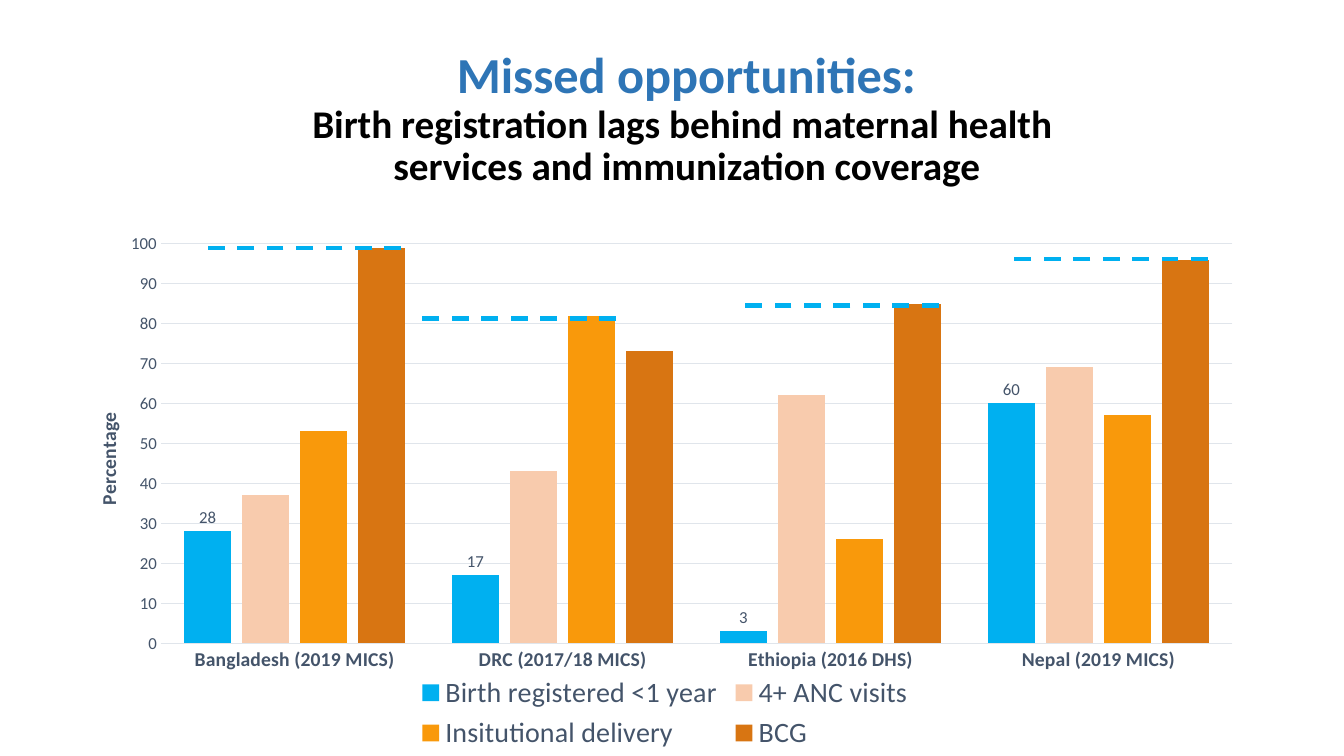
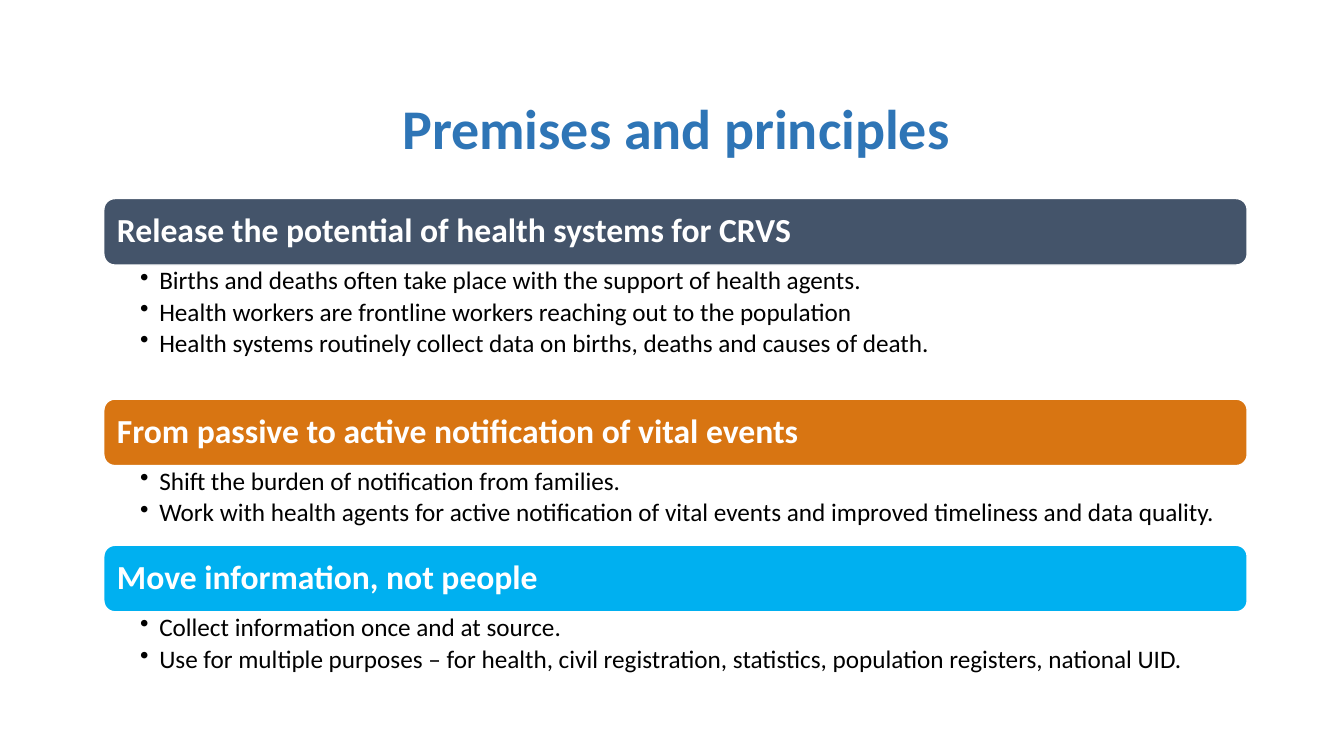
from copy import deepcopy
from dataclasses import dataclass

from lxml.etree import SubElement
from pptx import Presentation
from pptx.chart.data import CategoryChartData
from pptx.dml.color import RGBColor
from pptx.enum.chart import XL_CHART_TYPE, XL_LABEL_POSITION, XL_LEGEND_POSITION, XL_TICK_MARK
from pptx.enum.dml import MSO_LINE
from pptx.enum.shapes import MSO_CONNECTOR, MSO_SHAPE
from pptx.enum.text import MSO_ANCHOR, MSO_AUTO_SIZE, PP_ALIGN
from pptx.oxml import parse_xml
from pptx.oxml.ns import nsdecls, qn
from pptx.util import Inches, Pt


@dataclass(frozen=True)
class Theme:
    font: str = "Calibri"
    blue: RGBColor = RGBColor(0x2E, 0x75, 0xB6)
    sky: RGBColor = RGBColor(0x00, 0xB0, 0xF0)
    slate: RGBColor = RGBColor(0x44, 0x54, 0x6A)
    peach: RGBColor = RGBColor(0xF8, 0xCB, 0xAD)
    amber: RGBColor = RGBColor(0xF9, 0x99, 0x0B)
    rust: RGBColor = RGBColor(0xD8, 0x75, 0x12)
    grid: RGBColor = RGBColor(0xE0, 0xE5, 0xEB)
    black: RGBColor = RGBColor(0, 0, 0)
    white: RGBColor = RGBColor(0xFF, 0xFF, 0xFF)
    title: int = 40
    lead: int = 36
    subtitle: int = 28
    heading: int = 24
    legend: int = 20
    body: int = 18
    axis: int = 14
    tick: int = 12


THEME = Theme()
LINE_SPACING = 0.9
BAND_LEFT, BAND_WIDTH, BAND_HEIGHT = 1.03, 11.34, 0.66
BULLET_INDENT = 0.19
MARK_LENGTH = 2.04

COUNTRIES = ["Bangladesh (2019 MICS)", "DRC (2017/18 MICS)", "Ethiopia (2016 DHS)", "Nepal (2019 MICS)"]
COVERAGE = [
    ("Birth registered <1 year", [28, 17, 3, 60], THEME.sky),
    ("4+ ANC visits", [37, 43, 62, 69], THEME.peach),
    ("Insitutional delivery", [53, 82, 26, 57], THEME.amber),
    ("BCG", [99, 73, 85, 96], THEME.rust),
]
HIGHEST_MARKS = [(3.98, 2.46), (6.11, 3.16), (9.31, 3.03), (11.98, 2.57)]

PRINCIPLES = [
    ("Release the potential of health systems for CRVS", THEME.slate, 1.33, [
        "Births and deaths often take place with the support of health agents.",
        "Health workers are frontline workers reaching out to the population",
        "Health systems routinely collect data on births, deaths and causes of death.",
    ]),
    ("From passive to active notification of vital events", THEME.rust, 0.79, [
        "Shift the burden of notification from families.",
        "Work with health agents for active notification of vital events and improved timeliness and data quality.",
    ]),
    ("Move information, not people", THEME.sky, 0.79, [
        "Collect information once and at source.",
        "Use for multiple purposes – for health, civil registration, statistics, population registers, national UID.",
    ]),
]


def style_font(font, size, color, bold=False):
    font.name = THEME.font
    font.size = Pt(size)
    font.color.rgb = color
    font.bold = bold


def style_frame(frame, anchor, left, top, right, bottom):
    frame.word_wrap = True
    frame.auto_size = MSO_AUTO_SIZE.NONE
    frame.vertical_anchor = anchor
    frame.margin_left, frame.margin_top = Inches(left), Inches(top)
    frame.margin_right, frame.margin_bottom = Inches(right), Inches(bottom)


def add_titled_slide(deck, lines, top, width, height, left_margin):
    slide = deck.slides.add_slide(deck.slide_layouts[5])
    title = slide.shapes.title
    title.left, title.top = Inches(0), Inches(top)
    title.width, title.height = Inches(width), Inches(height)
    style_frame(title.text_frame, MSO_ANCHOR.MIDDLE, left_margin, 0.05, 0.1, 0.05)
    paragraph = title.text_frame.paragraphs[0]
    paragraph.text = "\v".join(text for text, _, _ in lines)
    paragraph.alignment = PP_ALIGN.CENTER
    paragraph.line_spacing = LINE_SPACING
    for run, (_, size, color) in zip(paragraph.runs, lines):
        style_font(run.font, size, color, bold=True)
    for line_break in paragraph._p.findall(qn("a:br")):
        line_break.append(deepcopy(line_break.getprevious().find(qn("a:rPr"))))
    return slide


def set_layout(parent, index, **fractions):
    current = parent.find(qn("c:layout"))
    if current is not None:
        parent.remove(current)
    target = '<c:layoutTarget val="inner"/>' if "w" in fractions else ""
    modes = "".join(f'<c:{axis}Mode val="edge"/>' for axis in "xy")
    values = "".join(f'<c:{key} val="{value}"/>' for key, value in fractions.items())
    parent.insert(index, parse_xml(
        f'<c:layout {nsdecls("c")}><c:manualLayout>{target}{modes}{values}</c:manualLayout></c:layout>'))


def style_line(line, color, width):
    line.color.rgb = color
    line.width = Pt(width)


def style_axes(chart):
    countries, percentage = chart.category_axis, chart.value_axis
    for axis, size, bold in ((countries, THEME.axis, True), (percentage, THEME.tick, False)):
        axis.major_tick_mark = axis.minor_tick_mark = XL_TICK_MARK.NONE
        style_font(axis.tick_labels.font, size, THEME.slate, bold)
    style_line(countries.format.line, THEME.grid, 0.75)

    percentage.minimum_scale, percentage.maximum_scale, percentage.major_unit = 0, 100, 10
    percentage.tick_labels.number_format = "#,##0"
    percentage.tick_labels.number_format_is_linked = False
    percentage.format.line.fill.background()
    style_line(percentage.major_gridlines.format.line, THEME.grid, 0.75)

    frame = percentage.axis_title.text_frame
    frame.text = "Percentage"
    style_font(frame.paragraphs[0].runs[0].font, THEME.axis, THEME.slate, bold=True)
    rotation = frame._txBody.find(qn("a:bodyPr"))
    rotation.set("rot", "-5400000")
    rotation.set("vert", "horz")
    set_layout(percentage.axis_title._element, 1, x=0.02, y=0.35)


def add_coverage_chart(slide):
    data = CategoryChartData(number_format="0")
    data.categories = COUNTRIES
    for name, values, _ in COVERAGE:
        data.add_series(name, values)
    chart = slide.shapes.add_chart(XL_CHART_TYPE.COLUMN_CLUSTERED, Inches(0.67), Inches(2.2),
                                   Inches(11.85), Inches(5.3), data).chart
    chart.has_title = False
    style_font(chart.font, 10, THEME.black)
    style_axes(chart)

    plot = chart.plots[0]
    plot.gap_width, plot.overlap, plot.vary_by_categories = 100, -24, False
    for series, (_, _, color) in zip(plot.series, COVERAGE):
        series.format.fill.solid()
        series.format.fill.fore_color.rgb = color
    labels = plot.series[0].data_labels
    labels.show_value = True
    labels.number_format, labels.number_format_is_linked = "0", False
    labels.position = XL_LABEL_POSITION.OUTSIDE_END
    style_font(labels.font, THEME.tick, THEME.slate)

    chart.has_legend = True
    chart.legend.position = XL_LEGEND_POSITION.BOTTOM
    chart.legend.include_in_layout = False
    style_font(chart.legend.font, THEME.legend, THEME.slate)
    set_layout(chart._chartSpace.chart.plotArea, 0, x=0.078, y=0.041, w=0.897, h=0.748)


def add_highest_mark(slide, right, y):
    mark = slide.shapes.add_connector(MSO_CONNECTOR.STRAIGHT, Inches(right), Inches(y),
                                      Inches(right - MARK_LENGTH), Inches(y))
    style_line(mark.line, THEME.sky, 3)
    mark.line.dash_style = MSO_LINE.DASH
    SubElement(mark._element.spPr, qn("a:effectLst"))


def add_band(slide, top, heading, color):
    band = slide.shapes.add_shape(MSO_SHAPE.ROUNDED_RECTANGLE, Inches(BAND_LEFT), Inches(top),
                                  Inches(BAND_WIDTH), Inches(BAND_HEIGHT))
    band.shadow.inherit = False
    band.fill.solid()
    band.fill.fore_color.rgb = color
    style_line(band.line, THEME.white, 1)
    style_frame(band.text_frame, MSO_ANCHOR.MIDDLE, 0.1, 0.1, 0.1, 0.1)
    band.text_frame.text = heading
    paragraph = band.text_frame.paragraphs[0]
    paragraph.alignment = PP_ALIGN.LEFT
    paragraph.line_spacing = LINE_SPACING
    style_font(paragraph.runs[0].font, THEME.heading, THEME.white, bold=True)


def add_bullets(slide, top, height, points):
    frame = slide.shapes.add_textbox(Inches(BAND_LEFT), Inches(top),
                                     Inches(BAND_WIDTH), Inches(height)).text_frame
    style_frame(frame, MSO_ANCHOR.TOP, 0.36, 0.03, 0.14, 0.03)
    frame.text = "\n".join(points)
    for paragraph in frame.paragraphs:
        properties = paragraph._p.get_or_add_pPr()
        properties.set("marL", str(Inches(BULLET_INDENT)))
        properties.set("indent", str(-Inches(BULLET_INDENT)))
        SubElement(properties, qn("a:buChar")).set("char", "•")
        paragraph.line_spacing = LINE_SPACING
        paragraph.space_after = Pt(3)
        style_font(paragraph.runs[0].font, THEME.body, THEME.black)


def build_opportunities(deck):
    slide = add_titled_slide(deck, [
        ("Missed opportunities:", THEME.lead, THEME.blue),
        ("Birth registration lags behind maternal health ", THEME.subtitle, THEME.black),
        ("services and immunization coverage", THEME.subtitle, THEME.black),
    ], 0.6, 13.33, 1.17, 0.39)
    add_coverage_chart(slide)
    for right, y in HIGHEST_MARKS:
        add_highest_mark(slide, right, y)


def build_principles(deck):
    slide = add_titled_slide(deck, [("Premises and principles", THEME.title, THEME.blue)],
                             0.92, 13.41, 0.77, 0.1)
    top = 1.97
    for heading, color, height, points in PRINCIPLES:
        add_band(slide, top, heading, color)
        add_bullets(slide, top + BAND_HEIGHT, height, points)
        top += BAND_HEIGHT + height


def main():
    deck = Presentation()
    deck.slide_width, deck.slide_height = Inches(13.33), Inches(7.5)
    build_opportunities(deck)
    build_principles(deck)
    deck.save("out.pptx")


if __name__ == "__main__":
    main()
